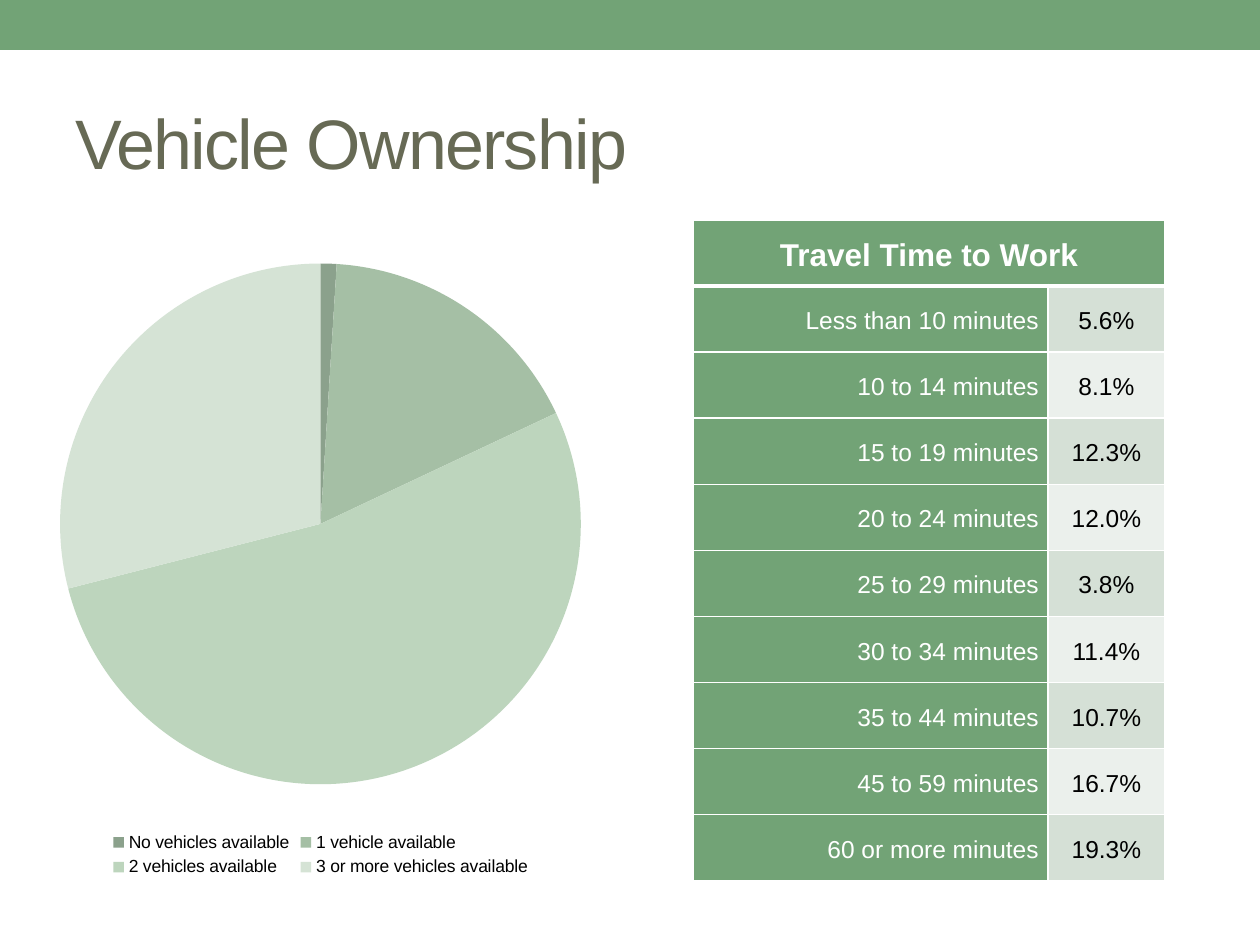
"""Build the Vehicle Ownership slide with a pie chart and a travel time table."""
from dataclasses import dataclass

from lxml import etree
from pptx import Presentation
from pptx import util as u
from pptx.chart import data
from pptx.dml.color import RGBColor
from pptx.enum import chart as ch, shapes, text
from pptx.oxml import ns

SCALE = 914400 / 126


def px(n):
    return u.Emu(round(n * SCALE))


def rgb(value):
    return RGBColor.from_string(value)


@dataclass(frozen=True)
class Theme:
    font: str = "Arial"
    green: str = "72A376"
    olive: str = "676A55"
    white: str = "FFFFFF"
    black: str = "000000"
    bands: tuple = ("D5E0D6", "EBF0EC")
    slices: tuple = ("8BA18C", "A5BFA5", "BDD5BD", "D5E3D5")
    title: int = 40
    header: int = 18
    body: int = 14
    legend: int = 10


class Deck:
    def __init__(self, prs, theme):
        self.t = theme
        self.s = prs.slides.add_slide(prs.slide_layouts[5])

    def style(self, font, size, color, bold=False):
        font.name, font.size, font.bold = self.t.font, u.Pt(size), bold
        font.color.rgb = rgb(color)

    def band(self, x, y, w, h):
        sp = self.s.shapes.add_shape(shapes.MSO_SHAPE.RECTANGLE, px(x), px(y), px(w), px(h))
        sp.shadow.inherit = False
        sp.fill.solid()
        sp.fill.fore_color.rgb = rgb(self.t.green)
        sp.line.fill.background()

    def title(self, words, x, y, w, h):
        sp = self.s.shapes.title
        sp.left, sp.top, sp.width, sp.height = px(x), px(y), px(w), px(h)
        tf = sp.text_frame
        tf.text = words
        tf.vertical_anchor = text.MSO_ANCHOR.MIDDLE
        p = tf.paragraphs[0]
        p.alignment = text.PP_ALIGN.LEFT
        self.style(p.font, self.t.title, self.t.olive)
        p.runs[0]._r.get_or_add_rPr().set("spc", "-100")

    def pie(self, values, x, y, w, h, plot):
        cd = data.CategoryChartData()
        cd.categories = list(values)
        cd.add_series("Series 1", list(values.values()))
        chart = self.s.shapes.add_chart(
            ch.XL_CHART_TYPE.PIE, px(x), px(y), px(w), px(h), cd).chart
        chart.has_title = False
        self.style(chart.font, self.t.legend, self.t.black)
        chart.has_legend = True
        chart.legend.position = ch.XL_LEGEND_POSITION.BOTTOM
        chart.legend.include_in_layout = False
        chart.plots[0].vary_by_categories = True
        for i, color in enumerate(self.t.slices):
            fmt = chart.plots[0].series[0].points[i].format
            fmt.fill.solid()
            fmt.fill.fore_color.rgb = rgb(color)
            fmt.line.fill.background()
        area = chart._chartSpace.find(".//" + ns.qn("c:plotArea"))
        for old in area.findall(ns.qn("c:layout")):
            area.remove(old)
        layout = etree.Element(ns.qn("c:layout"))
        manual = etree.SubElement(layout, ns.qn("c:manualLayout"))
        settings = dict(layoutTarget="inner", xMode="edge", yMode="edge", **plot)
        for tag, value in settings.items():
            etree.SubElement(manual, ns.qn("c:" + tag)).set("val", str(value))
        area.insert(0, layout)

    def cell(self, cell, words, fill, color, size, align, bold=False, bottom=1):
        cell.fill.solid()
        cell.fill.fore_color.rgb = rgb(fill)
        cell.margin_left = cell.margin_right = px(9)
        cell.margin_top = cell.margin_bottom = 0
        cell.vertical_anchor = text.MSO_ANCHOR.MIDDLE
        cell.text = words
        p = cell.text_frame.paragraphs[0]
        p.alignment, p.line_spacing = align, 1.15
        self.style(p.font, size, color, bold)
        tc_pr = cell._tc.get_or_add_tcPr()
        for i, (side, width) in enumerate(dict(L=1, R=1, T=1, B=bottom).items()):
            ln = etree.Element(ns.qn("a:ln" + side), w=str(u.Pt(width)))
            solid = etree.SubElement(ln, ns.qn("a:solidFill"))
            etree.SubElement(solid, ns.qn("a:srgbClr"), val=self.t.white)
            tc_pr.insert(i, ln)

    def table(self, header, rows, x, y, widths, h):
        t, align = self.t, text.PP_ALIGN
        table = self.s.shapes.add_table(
            len(rows) + 1, 2, px(x), px(y), px(sum(widths)), px(h)).table
        for col, w in zip(table.columns, widths):
            col.width = px(w)
        table.cell(0, 0).merge(table.cell(0, 1))
        self.cell(table.cell(0, 0), header, t.green, t.white, t.header,
                  align.CENTER, bold=True, bottom=3)
        for i, (label, share) in enumerate(rows, 1):
            self.cell(table.cell(i, 0), label, t.green, t.white, t.body, align.RIGHT)
            self.cell(table.cell(i, 1), share, t.bands[(i - 1) % 2], t.black,
                      t.body, align.CENTER)


def main():
    prs = Presentation()
    prs.slide_width, prs.slide_height = px(1260), px(945)
    deck = Deck(prs, Theme())
    deck.band(0, 0, 1260, 50)
    deck.title("Vehicle Ownership", 63, 73, 1134, 136)
    vehicles = {
        "No vehicles available": 1,
        "1 vehicle available": 17,
        "2 vehicles available": 53,
        "3 or more vehicles available": 29,
    }
    deck.pie(vehicles, 42, 231, 557, 651, dict(x=0.03, y=0.05, w=0.94, h=0.8))
    times = [
        ("Less than 10 minutes", "5.6%"),
        ("10 to 14 minutes", "8.1%"),
        ("15 to 19 minutes", "12.3%"),
        ("20 to 24 minutes", "12.0%"),
        ("25 to 29 minutes", "3.8%"),
        ("30 to 34 minutes", "11.4%"),
        ("35 to 44 minutes", "10.7%"),
        ("45 to 59 minutes", "16.7%"),
        ("60 or more minutes", "19.3%"),
    ]
    deck.table("Travel Time to Work", times, 693, 220, (355, 117), 661)
    prs.save("out.pptx")


if __name__ == "__main__":
    main()
